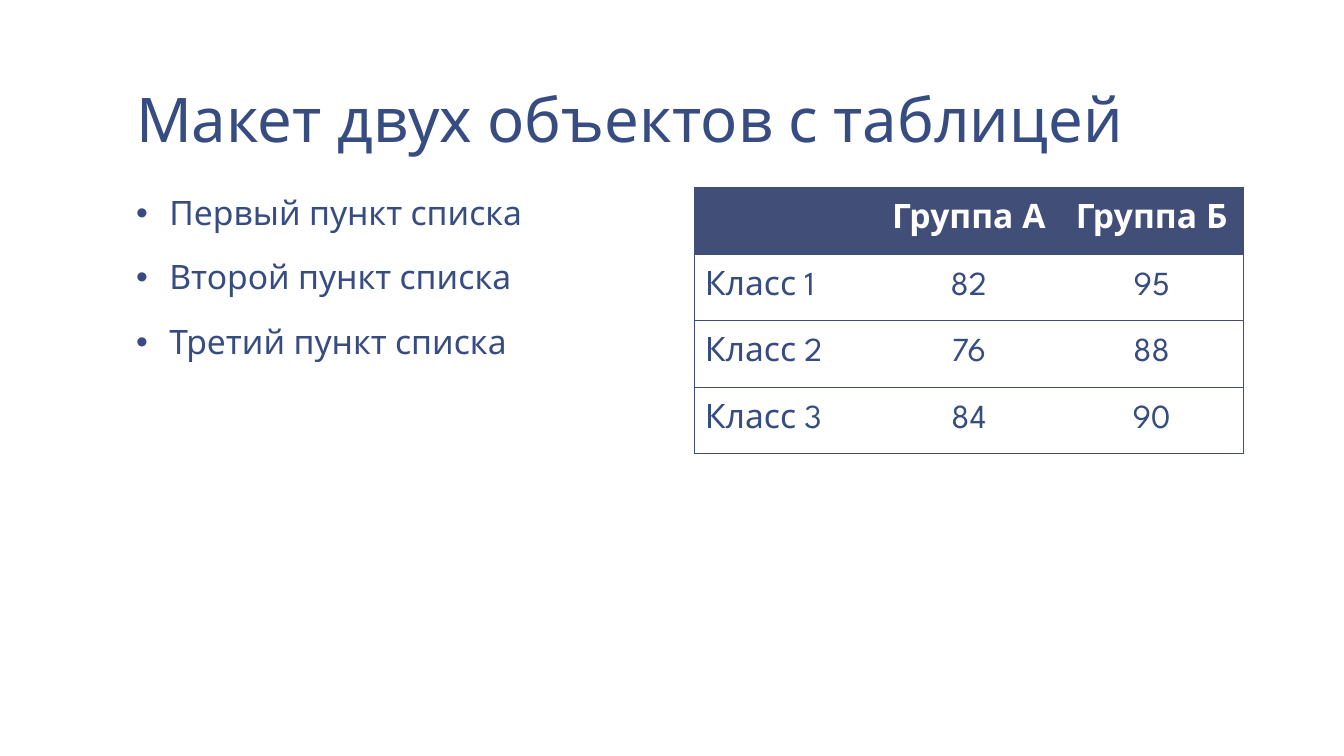
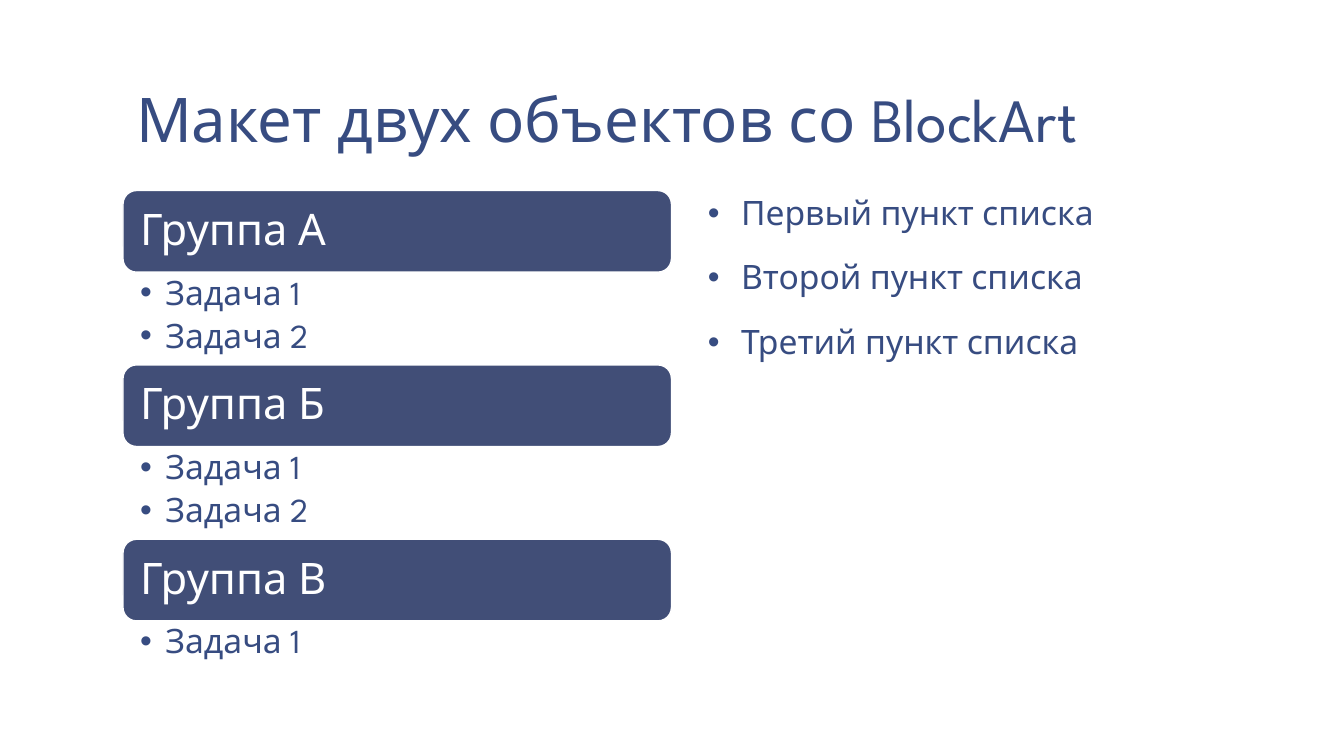
"""Builds two slides: a list beside a table, and grouped tasks beside a list."""
import pptx
import pptx.chart.data
import pptx.dml.color
import pptx.enum.shapes
import pptx.enum.text
import pptx.oxml
import pptx.oxml.ns
import pptx.util

Inches = pptx.util.Inches
Pt = pptx.util.Pt
ALIGN = pptx.enum.text.PP_ALIGN
ANCHOR = pptx.enum.text.MSO_ANCHOR
FONT = "League Spartan"
INK, NAVY, WHITE = "374C81", "414E77", "FFFFFF"
LEFT, RIGHT, COLUMN_WIDTH, BODY_TOP = 1.22, 6.89, 5.44, 1.86
POINTS = ["Первый пункт списка", "Второй пункт списка", "Третий пункт списка"]
SCORES = [
    ["", "Группа А", "Группа Б"],
    ["Класс 1", "82", "95"],
    ["Класс 2", "76", "88"],
    ["Класс 3", "84", "90"],
]
GROUPS = [
    ("Группа А", ["Задача 1", "Задача 2"]),
    ("Группа Б", ["Задача 1", "Задача 2"]),
    ("Группа В", ["Задача 1"]),
]


def rgb(value):
    return pptx.dml.color.RGBColor.from_string(value)


def write(frame, lines, size, color=INK, insets=(0.13, 0.07, 0.13, 0.07), anchor=ANCHOR.TOP,
          spacing=0.95, before=0, after=0, indent=0, align=ALIGN.LEFT, bold=False):
    frame.word_wrap = True
    frame.vertical_anchor = anchor
    frame.margin_left, frame.margin_top, frame.margin_right, frame.margin_bottom = map(Inches, insets)
    for index, line in enumerate(lines):
        paragraph = frame.paragraphs[0] if index == 0 else frame.add_paragraph()
        paragraph.alignment = align
        paragraph.line_spacing = spacing
        paragraph.space_before = Pt(before if index else 0)
        paragraph.space_after = Pt(after)
        if indent:
            properties = paragraph._p.get_or_add_pPr()
            properties.set("marL", str(Inches(indent)))
            properties.set("indent", str(-Inches(indent)))
            properties.append(pptx.oxml.parse_xml(
                f'<a:buFont {pptx.oxml.ns.nsdecls("a")} typeface="Arial"/>'))
            properties.append(pptx.oxml.parse_xml(
                f'<a:buChar {pptx.oxml.ns.nsdecls("a")} char="•"/>'))
        run = paragraph.add_run()
        run.text = line
        run.font.name = FONT
        run.font.size = Pt(size)
        run.font.bold = bold
        run.font.color.rgb = rgb(color)


deck = pptx.Presentation()
deck.slide_width, deck.slide_height = Inches(13.33), Inches(7.5)

slides = []
for heading, list_left in [("Макет двух объектов с таблицей", LEFT),
                           ("Макет двух объектов со BlockArt", RIGHT)]:
    slide = deck.slides.add_slide(deck.slide_layouts[6])
    slide.background.fill.solid()
    slide.background.fill.fore_color.rgb = rgb(WHITE)
    title = slide.shapes.add_textbox(Inches(LEFT), Inches(0.08), Inches(11.11), Inches(1.53))
    write(title.text_frame, [heading], 44, anchor=ANCHOR.BOTTOM, spacing=0.85)
    points = slide.shapes.add_textbox(
        Inches(list_left), Inches(BODY_TOP), Inches(COLUMN_WIDTH), Inches(4.89))
    write(points.text_frame, POINTS, 24, before=18.7, indent=0.33)
    slides.append(slide)
table_slide, groups_slide = slides

scores = table_slide.shapes.add_table(
    len(SCORES), len(SCORES[0]), Inches(RIGHT), Inches(BODY_TOP),
    Inches(COLUMN_WIDTH), Inches(2.64)).table
scores.first_row = scores.horz_banding = False
for row, values in enumerate(SCORES):
    for column, value in enumerate(values):
        cell = scores.cell(row, column)
        header = row == 0
        drawn = {"L": column == 0, "R": column == len(values) - 1, "T": True, "B": True}
        for side, visible in drawn.items():
            paint = f'<a:solidFill><a:srgbClr val="{NAVY}"/></a:solidFill>' if visible else "<a:noFill/>"
            cell._tc.get_or_add_tcPr().append(pptx.oxml.parse_xml(
                f'<a:ln{side} {pptx.oxml.ns.nsdecls("a")} w="{Pt(0.5)}">{paint}</a:ln{side}>'))
        if header:
            cell.fill.solid()
            cell.fill.fore_color.rgb = rgb(NAVY)
        else:
            cell.fill.background()
        cell.vertical_anchor = ANCHOR.MIDDLE
        if value:
            paragraph = cell.text_frame.paragraphs[0]
            paragraph.alignment = ALIGN.CENTER if column else ALIGN.LEFT
            run = paragraph.add_run()
            run.text = value
            run.font.name = FONT
            run.font.size = Pt(24)
            run.font.bold = header
            run.font.color.rgb = rgb(WHITE if header else INK)

BAR_HEIGHT, GROUP_PITCH = 0.81, 1.73
for index, (group, tasks) in enumerate(GROUPS):
    top = 1.89 + index * GROUP_PITCH
    bar = groups_slide.shapes.add_shape(
        pptx.enum.shapes.MSO_SHAPE.ROUNDED_RECTANGLE,
        Inches(LEFT), Inches(top), Inches(COLUMN_WIDTH), Inches(BAR_HEIGHT))
    bar.shadow.inherit = False
    bar.fill.solid()
    bar.fill.fore_color.rgb = rgb(NAVY)
    bar.line.color.rgb = rgb(WHITE)
    bar.line.width = Pt(1)
    write(bar.text_frame, [group], 31, WHITE, (0.13, 0.13, 0.13, 0.13), ANCHOR.MIDDLE, spacing=0.9)
    task_list = groups_slide.shapes.add_textbox(
        Inches(LEFT), Inches(top + BAR_HEIGHT), Inches(COLUMN_WIDTH),
        Inches(0.21 + 0.35 * len(tasks)))
    write(task_list.text_frame, tasks, 24, insets=(0.17, 0.04, 0.24, 0.04),
          spacing=0.9, after=4.8, indent=0.25)

deck.save("out.pptx")
